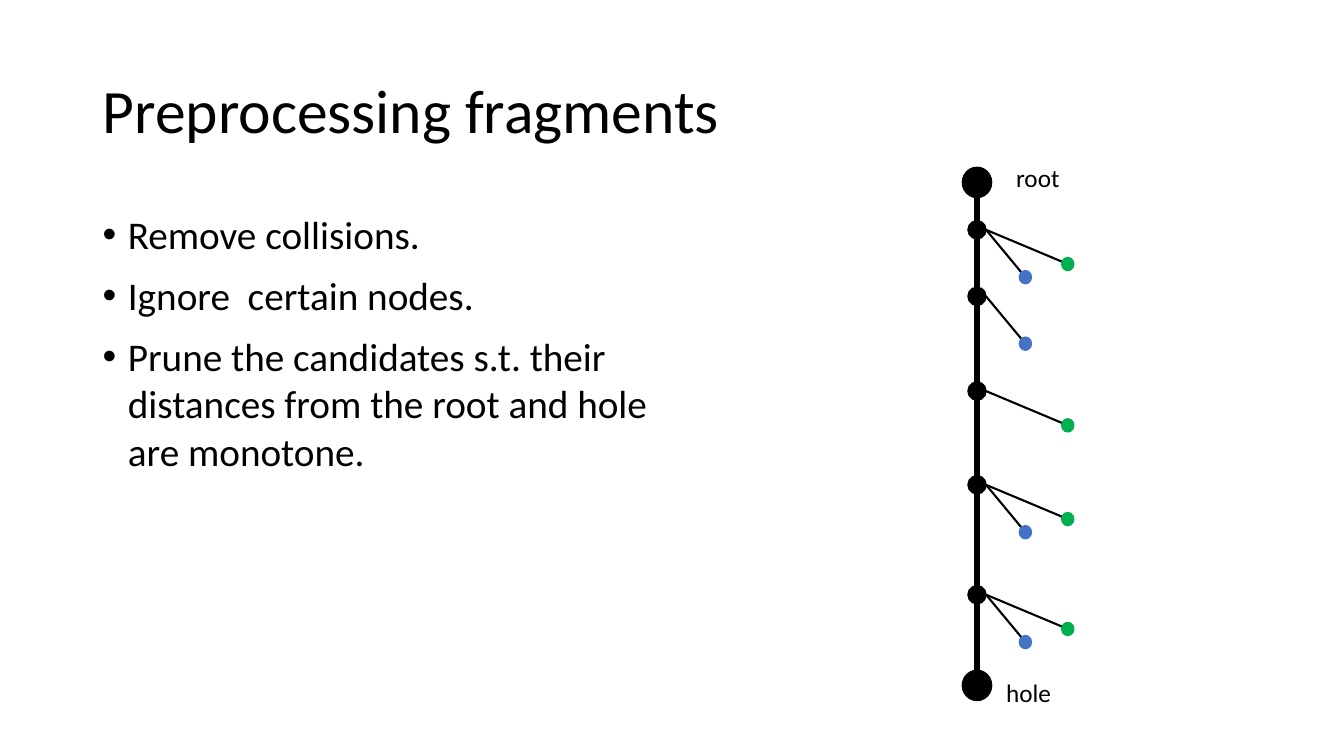
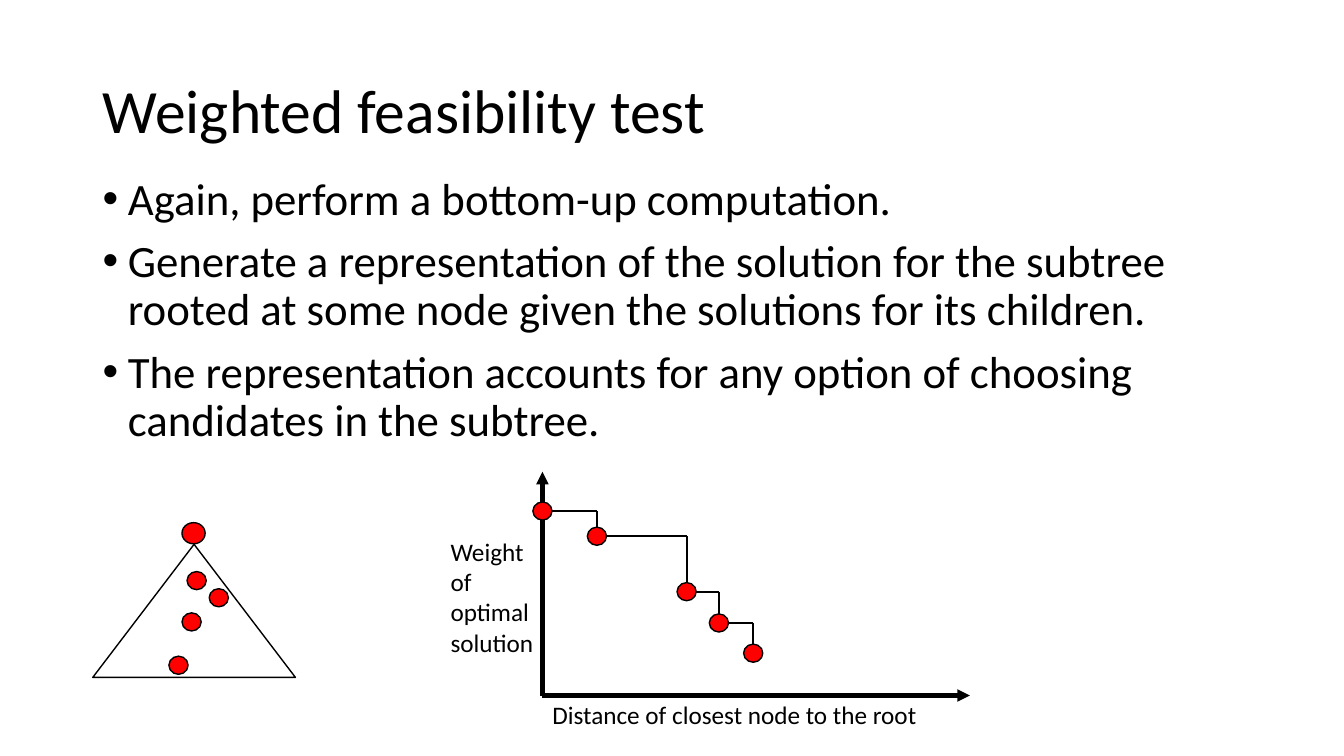
from lxml import etree
from pptx import Presentation
from pptx.dml.color import RGBColor
from pptx.enum import shapes, text
from pptx.oxml import ns
from pptx.util import Inches, Pt

BLACK = RGBColor(0x00, 0x00, 0x00)
WHITE = RGBColor(0xFF, 0xFF, 0xFF)
GREEN = RGBColor(0x00, 0xB0, 0x50)
BLUE = RGBColor(0x44, 0x72, 0xC4)
RED = RGBColor(0xFF, 0x00, 0x00)
FONT = "Calibri"
MARGIN = 0.92
CONTENT_WIDTH = 11.5


def add_text(page, paragraphs, left, top, width, height, *, size=18, spacing=1.0,
             before=0, bullet=None, anchor=text.MSO_ANCHOR.TOP, grow=False):
    box = page.shapes.add_textbox(Inches(left), Inches(top), Inches(width), Inches(height))
    frame = box.text_frame
    frame.word_wrap = True
    frame.vertical_anchor = anchor
    if grow:
        frame.auto_size = text.MSO_AUTO_SIZE.SHAPE_TO_FIT_TEXT
    for index, wording in enumerate(paragraphs):
        para = frame.add_paragraph() if index else frame.paragraphs[0]
        para.line_spacing = spacing
        para.space_before = Pt(before)
        span = para.add_run()
        span.text = wording
        span.font.name = FONT
        span.font.size = Pt(size)
        span.font.color.rgb = BLACK
        if bullet:
            add_bullet(para, bullet)
    return box


def add_bullet(para, character):
    properties = para._p.get_or_add_pPr()
    properties.set("marL", str(Inches(0.25)))
    properties.set("indent", str(-Inches(0.25)))
    font = etree.SubElement(properties, ns.qn("a:buFont"))
    font.set("typeface", "Arial")
    etree.SubElement(properties, ns.qn("a:buChar")).set("char", character)


def add_title(page, wording):
    add_text(page, [wording], MARGIN, 0.4, CONTENT_WIDTH, 1.45, size=44, spacing=0.9,
             anchor=text.MSO_ANCHOR.MIDDLE)


def add_bullets(page, items, top, width, height, **style):
    add_text(page, items, MARGIN, top, width, height, before=10, bullet="•", **style)


def add_label(page, wording, left, top, width, height=0.4):
    add_text(page, [wording], left, top, width, height, grow=True)


def add_outline(page, kind, left, top, width, height, fill, line):
    shape = page.shapes.add_shape(kind, Inches(left), Inches(top), Inches(width), Inches(height))
    shape.shadow.inherit = False
    shape.fill.solid()
    shape.fill.fore_color.rgb = fill
    shape.line.color.rgb = line
    shape.line.width = Pt(1)
    return shape


def add_dot(page, center, width, height, fill, line=None):
    x, y = center
    return add_outline(page, shapes.MSO_SHAPE.OVAL, x - width / 2, y - height / 2,
                       width, height, fill, line or fill)


def add_line(page, start, end, weight=1.5, arrow=False):
    line = page.shapes.add_connector(shapes.MSO_CONNECTOR.STRAIGHT,
                                     *(Inches(value) for value in (*start, *end)))
    line.line.color.rgb = BLACK
    line.line.width = Pt(weight)
    if arrow:
        outline = line.line._get_or_add_ln()
        etree.SubElement(outline, ns.qn("a:tailEnd")).set("type", "triangle")
    etree.SubElement(line._element.spPr, ns.qn("a:effectLst"))
    return line


def draw_fragment(page):
    spine = 9.69
    root, hole = 1.81, 6.8
    far, near = (0.9, 0.34, GREEN), (0.48, 0.47, BLUE)
    nodes = [(2.28, [far, near]), (2.94, [near]), (3.88, [far]),
             (4.81, [far, near]), (5.9, [far, near])]
    add_line(page, (spine, root), (spine, hole), weight=4.75)
    for y in (root, hole):
        add_dot(page, (spine, y), 0.29, 0.3, BLACK)
    add_label(page, "root", 9.98, 1.56, 0.67)
    add_label(page, "hole", 9.88, 6.67, 0.68)
    for y, candidates in nodes:
        add_dot(page, (spine, y), 0.18, 0.18, BLACK)
        for across, down, color in candidates:
            candidate = (spine + across, y + down)
            add_line(page, (spine + 0.09, y), candidate)
            add_dot(page, candidate, 0.12, 0.13, color)


def draw_subtree(page):
    add_outline(page, shapes.MSO_SHAPE.ISOSCELES_TRIANGLE, 0.92, 5.4, 2.01, 1.32, WHITE, BLACK)
    for center in [(1.95, 5.76), (2.17, 5.93), (1.9, 6.17), (1.77, 6.6)]:
        add_dot(page, center, 0.19, 0.18, RED, BLACK)
    add_dot(page, (1.92, 5.29), 0.23, 0.21, RED, BLACK)


def draw_staircase(page):
    origin = (5.38, 6.9)
    points = [(5.38, 5.07), (5.92, 5.32), (6.81, 5.87), (7.13, 6.18), (7.47, 6.48)]
    for (x, y), (next_x, next_y) in zip(points, points[1:]):
        corner = (next_x, y)
        add_line(page, (x, y), corner)
        add_line(page, corner, (next_x, next_y))
    for tip in [(5.38, 4.68), (9.62, 6.9)]:
        add_line(page, origin, tip, weight=3, arrow=True)
    add_label(page, "Weight of optimal solution", 4.37, 5.27, 1.16, 1.31)
    add_label(page, "Distance of closest node to the root", 5.38, 6.89, 3.94)
    for point in points:
        add_dot(page, point, 0.19, 0.18, RED, BLACK)


def build_preprocessing(page):
    add_title(page, "Preprocessing fragments")
    add_bullets(page, [
        "Remove collisions.",
        "Ignore  certain nodes.",
        "Prune the candidates s.t. their distances from the root and hole are monotone.",
    ], 2.04, 6.08, 4.7, size=28)
    draw_fragment(page)


def build_feasibility(page):
    add_title(page, "Weighted feasibility test")
    add_bullets(page, [
        "Again, perform a bottom-up computation.",
        "Generate a representation of the solution for the subtree rooted at some node "
        "given the solutions for its children.",
        "The representation accounts for any option of choosing candidates in the subtree.",
    ], 1.7, CONTENT_WIDTH, 2.85, size=32, spacing=0.9)
    draw_subtree(page)
    draw_staircase(page)


def main():
    deck = Presentation()
    deck.slide_width, deck.slide_height = Inches(13.33), Inches(7.5)
    for build in (build_preprocessing, build_feasibility):
        build(deck.slides.add_slide(deck.slide_layouts[6]))
    deck.save("out.pptx")


if __name__ == "__main__":
    main()
